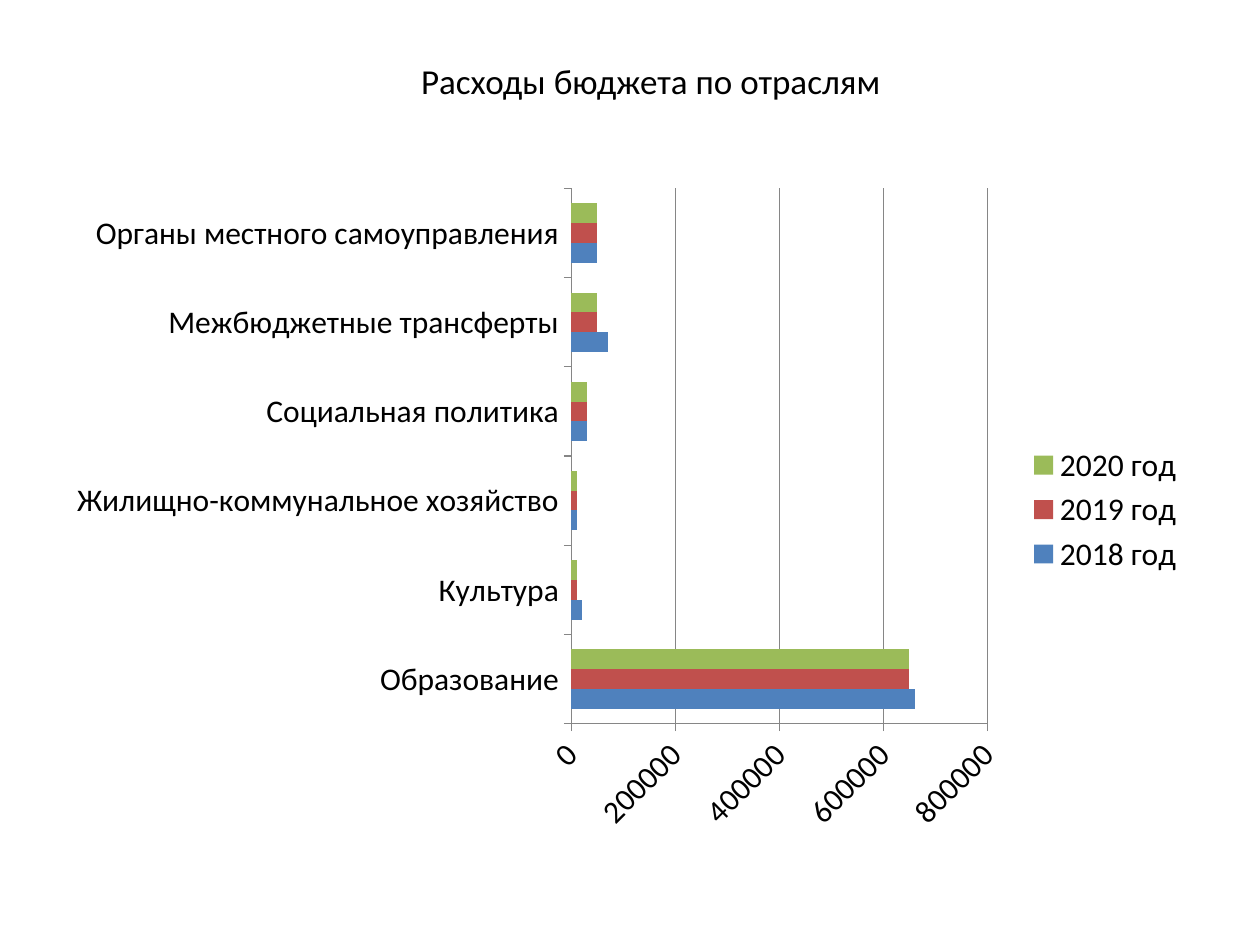
from pptx import Presentation
from pptx.chart.data import CategoryChartData
from pptx.dml.color import RGBColor
from pptx.enum.chart import XL_CHART_TYPE, XL_LEGEND_POSITION, XL_TICK_MARK
from pptx.enum.text import MSO_ANCHOR, PP_ALIGN
from pptx.util import Inches, Pt

BAR = XL_CHART_TYPE.BAR_CLUSTERED
RIGHT = XL_LEGEND_POSITION.RIGHT
OUT = XL_TICK_MARK.OUTSIDE
MIDDLE = MSO_ANCHOR.MIDDLE
CENTER = PP_ALIGN.CENTER

# Content
FONT, BLACK, GRAY = "Calibri", "000000", "868686"
TITLE = "Расходы бюджета по отраслям"
SECTORS = [
    "Образование",
    "Культура",
    "Жилищно-коммунальное хозяйство",
    "Социальная политика",
    "Межбюджетные трансферты",
    "Органы местного самоуправления",
]
YEARS = [
    ("2018 год", "4F81BD", [660000, 20000, 10000, 30000, 70000, 50000]),
    ("2019 год", "C0504D", [650000, 10000, 10000, 30000, 50000, 50000]),
    ("2020 год", "9BBB59", [650000, 10000, 10000, 30000, 50000, 50000]),
]


def color(code):
    return RGBColor.from_string(code)


def style(font, size):
    font.name = FONT
    font.size = Pt(size)
    font.bold = False
    font.color.rgb = color(BLACK)


def rule(line):
    line.color.rgb = color(GRAY)
    line.width = Pt(0.75)


def box(*dims):
    return [Inches(d) for d in dims]


deck = Presentation()
deck.slide_width, deck.slide_height = box(10, 7.5)
slide = deck.slides.add_slide(deck.slide_layouts[6])

# Title
frame = slide.shapes.add_textbox(*box(0.82, 0.28, 8.69, 0.71)).text_frame
frame.word_wrap = True
frame.vertical_anchor = MIDDLE
para = frame.paragraphs[0]
para.alignment = CENTER
run = para.add_run()
run.text = TITLE
style(run.font, 20)

# Chart data
data = CategoryChartData(number_format="General")
data.categories = SECTORS
for name, _, values in YEARS:
    data.add_series(name, values)
chart = slide.shapes.add_chart(BAR, *box(0.43, 1.39, 9.07, 5.31), data).chart
chart.has_title = False
style(chart.font, 18)

# Bars
plot = chart.plots[0]
plot.gap_width = 150
plot.vary_by_categories = False
for series, (_, code, _) in zip(plot.series, YEARS):
    series.invert_if_negative = False
    series.format.fill.solid()
    series.format.fill.fore_color.rgb = color(code)

# Axes
for axis in (chart.category_axis, chart.value_axis):
    axis.major_tick_mark = OUT
    rule(axis.format.line)
    style(axis.tick_labels.font, 18)
scale = chart.value_axis
scale.minimum_scale, scale.maximum_scale = 0, 800000
scale.major_unit = 200000
scale.has_major_gridlines = True
rule(scale.major_gridlines.format.line)
# Slant the value labels by 45 degrees
scale._element.txPr.bodyPr.set("rot", str(-45 * 60000))

# Legend
chart.has_legend = True
chart.legend.position = RIGHT
chart.legend.include_in_layout = False
style(chart.legend.font, 18)

deck.save("out.pptx")
